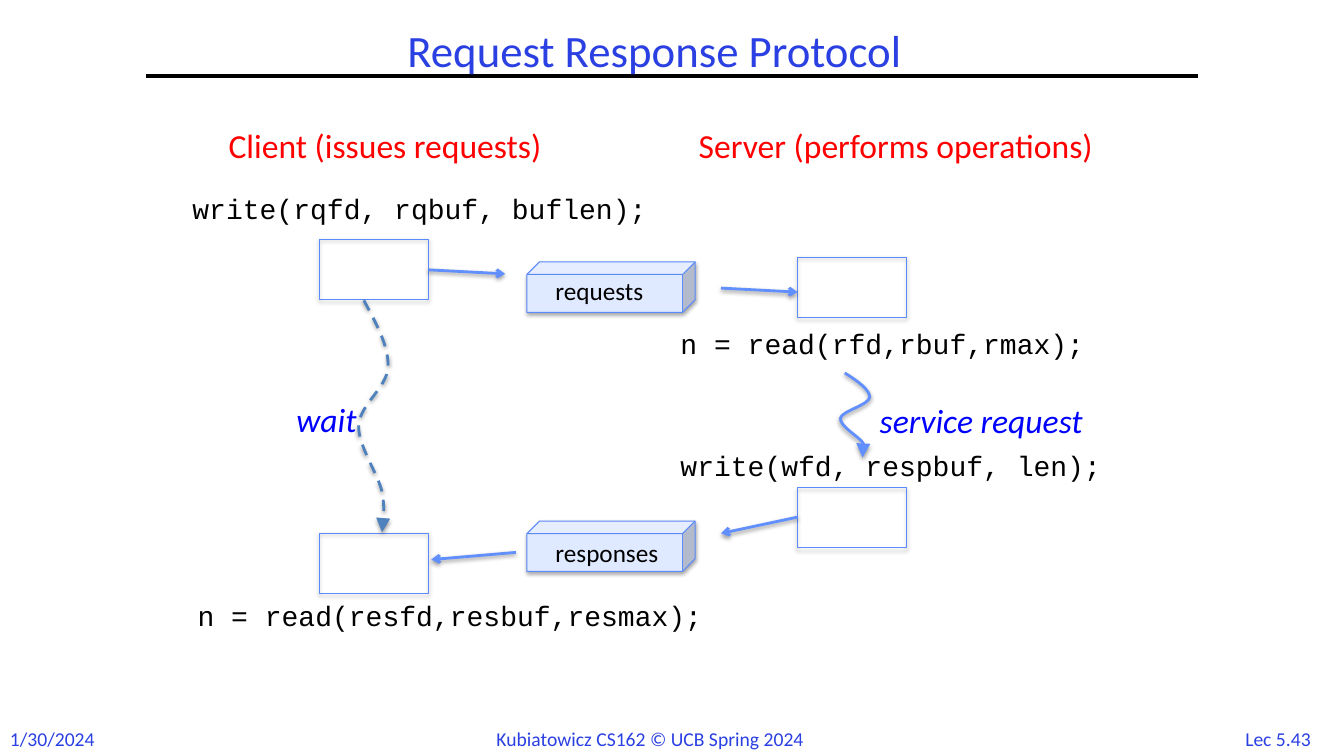
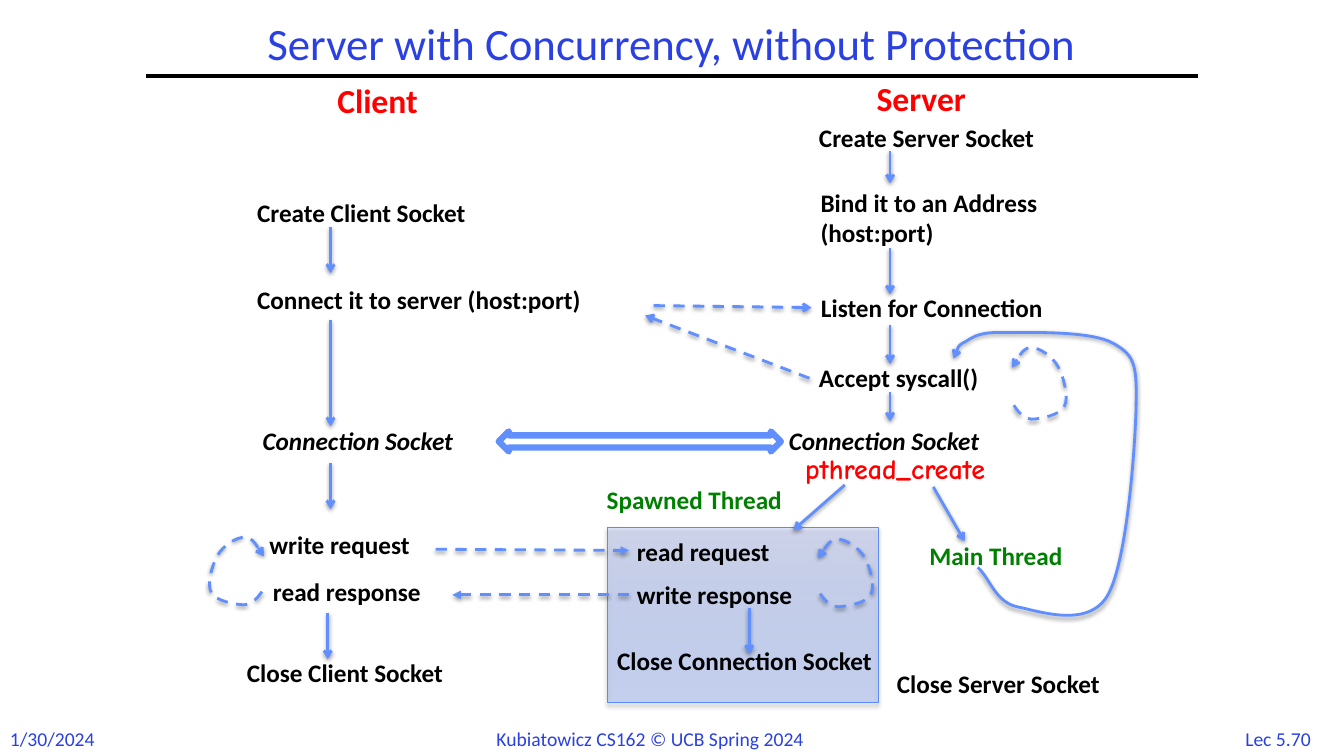
from lxml.etree import SubElement
from pptx import Presentation
from pptx.dml.color import RGBColor
from pptx.enum.dml import MSO_LINE
from pptx.enum.shapes import MSO_CONNECTOR, MSO_SHAPE
from pptx.enum.text import MSO_ANCHOR, PP_ALIGN
from pptx.oxml.ns import qn
from pptx.util import Cm, Pt

COLORS = {
    "title": "2A40E2",
    "black": "000000",
    "white": "FFFFFF",
    "heading": "FF0000",
    "action": "0000FF",
    "thread": "008000",
    "arrow": "618FFD",
    "wait": "4F81BD",
    "border": "5B8AFB",
    "cube": "DFE9FF",
    "panel_bottom": "5F8EFF",
    "panel_top": "C4D0FF",
}
CODE_FONT = "Courier New"
LOOP = [
    (0.05, 1.37),
    (0.15, 1.52), (0.28, 1.68), (0.5, 1.7),
    (0.71, 1.7), (1.22, 1.6), (1.32, 1.4),
    (1.45, 1.19), (1.3, 0.69), (1.17, 0.46),
    (1.02, 0.2), (0.69, 0), (0.5, 0),
    (0.3, 0), (0.15, 0.25), (0, 0.48),
]
SERVICE_CURVE = [
    (21.29, 9.4),
    (21.62, 9.6), (21.92, 9.83), (21.92, 10.01),
    (21.89, 10.21), (21.21, 10.36), (21.18, 10.54),
    (21.16, 10.74), (21.64, 11), (21.74, 11.15),
    (21.84, 11.33), (21.74, 11.53), (21.74, 11.53),
]
WAIT_CURVE = [
    (9.17, 7.57),
    (9.47, 8.13), (9.8, 8.71), (9.78, 9.25),
    (9.75, 9.78), (9.07, 10.19), (9.04, 10.72),
    (9.02, 11.23), (9.53, 11.94), (9.63, 12.4),
    (9.7, 12.85), (9.63, 13.41), (9.63, 13.41),
]
ACCEPT_AGAIN_CURVE = [
    (24.64, 14.3),
    (24.94, 14.55), (25.07, 15.16), (25.63, 15.29),
    (26.16, 15.39), (27.41, 15.85), (27.91, 15.01),
    (28.4, 14.17), (28.6, 11.35), (28.63, 10.31),
    (28.65, 9.25), (28.63, 8.97), (28.07, 8.66),
    (27.53, 8.33), (25.93, 8.38), (25.32, 8.38),
    (24.69, 8.36), (24.54, 8.48), (24.33, 8.61),
    (24.13, 8.71), (24.08, 8.89), (24.03, 9.04),
]


def color(name):
    return RGBColor.from_string(COLORS[name])


def add_text(slide, text, left, top, width, height=1.02, size=18, font="Calibri",
             fill="black", bold=False, italic=False, align=PP_ALIGN.LEFT):
    shape = slide.shapes.add_textbox(Cm(left), Cm(top), Cm(width), Cm(height))
    text_frame = shape.text_frame
    text_frame.word_wrap = True
    text_frame.text = text
    for paragraph in text_frame.paragraphs:
        paragraph.alignment = align
        for run in paragraph.runs:
            run.font.name = font
            run.font.size = Pt(size)
            run.font.bold = bold
            run.font.italic = italic
            run.font.color.rgb = color(fill)
    return shape


def set_shadow(shape, opacity=None, distance=1.8):
    effects = SubElement(shape._element.spPr, qn("a:effectLst"))
    if opacity is None:
        return
    shadow = SubElement(effects, qn("a:outerShdw"), blurRad=str(Pt(3.1)),
                        dist=str(Pt(distance)), dir="5400000", rotWithShape="0")
    black = SubElement(shadow, qn("a:srgbClr"), val=COLORS["black"])
    SubElement(black, qn("a:alpha"), val=str(opacity * 1000))


def style_arrow(shape, head, dashed, line_color, head_size="med"):
    shape.line.color.rgb = color(line_color)
    shape.line.width = Pt(2)
    if dashed:
        shape.line.dash_style = MSO_LINE.DASH
    SubElement(shape._element.spPr.find(qn("a:ln")), qn("a:tailEnd"), type=head,
               w=head_size, len=head_size)
    set_shadow(shape, 38, 1.6)


def add_line(slide, start_x, start_y, end_x, end_y):
    return slide.shapes.add_connector(MSO_CONNECTOR.STRAIGHT, Cm(start_x), Cm(start_y),
                                      Cm(end_x), Cm(end_y))


def add_arrow(slide, start_x, start_y, end_x, end_y, head="arrow", dashed=False):
    connector = add_line(slide, start_x, start_y, end_x, end_y)
    style_arrow(connector, head, dashed, "arrow")


def bend_segments(shape):
    outline = next(shape._element.iter(qn("a:path")))
    segments = outline.findall(qn("a:lnTo"))
    for first in range(0, len(segments), 3):
        bend = SubElement(outline, qn("a:cubicBezTo"))
        for segment in segments[first:first + 3]:
            bend.append(segment[0])
            outline.remove(segment)


def add_curve(slide, points, head="arrow", dashed=False, line_color="arrow", head_size="med"):
    start, *others = [(Cm(x), Cm(y)) for x, y in points]
    builder = slide.shapes.build_freeform(*start)
    builder.add_line_segments(others, close=False)
    shape = builder.convert_to_shape()
    bend_segments(shape)
    shape.fill.background()
    style_arrow(shape, head, dashed, line_color, head_size)


def add_loop(slide, left, top, x_scale=1, y_scale=1):
    points = [(left + x * x_scale, top + y * y_scale) for x, y in LOOP]
    add_curve(slide, points, dashed=True)


def add_box(slide, kind, left, top, width, height, fill=None, line="border",
            line_width=0.75, shadow=35):
    shape = slide.shapes.add_shape(kind, Cm(left), Cm(top), Cm(width), Cm(height))
    if fill:
        shape.fill.solid()
        shape.fill.fore_color.rgb = color(fill)
    else:
        shape.fill.background()
    shape.line.color.rgb = color(line)
    shape.line.width = Pt(line_width)
    set_shadow(shape, shadow)
    return shape


def add_thread_panel(slide, left, top, width, height):
    panel = add_box(slide, MSO_SHAPE.RECTANGLE, left, top, width, height)
    panel.fill.gradient()
    panel.fill.gradient_angle = 90
    stops = (("panel_bottom", 0, 26), ("panel_top", 1, 46))
    for stop, (name, position, _) in zip(panel.fill.gradient_stops, stops):
        stop.position = position
        stop.color.rgb = color(name)
    gradient = panel._element.spPr.find(qn("a:gradFill"))
    for element, (_, _, opacity) in zip(gradient.iter(qn("a:srgbClr")), stops):
        SubElement(element, qn("a:alpha"), val=str(opacity * 1000))


def add_double_arrow(slide, left, top, width, height):
    shape = add_box(slide, MSO_SHAPE.LEFT_RIGHT_ARROW, left, top, width, height,
                    "white", "arrow", 4.5, None)
    shape.adjustments[0] = 0.6


def add_base_slide(presentation, title, title_box, number):
    slide = presentation.slides.add_slide(presentation.slide_layouts[6])
    rule = add_line(slide, 3.67, 1.91, 30.2, 1.91)
    rule.line.color.rgb = color("black")
    rule.line.width = Pt(3)
    set_shadow(rule)
    for text, left, width, align in (
        ("1/30/2024", 0, 2.72, PP_ALIGN.LEFT),
        ("Kubiatowicz CS162 © UCB Spring 2024", 12.26, 9.35, PP_ALIGN.LEFT),
        (f"Lec {number}", 30.98, 2.46, PP_ALIGN.CENTER),
    ):
        add_text(slide, text, left, 18.19, width, 0.85, 14, fill="title", align=align)
    shape = add_text(slide, title, *title_box, size=32, fill="title", align=PP_ALIGN.CENTER)
    shape.text_frame.vertical_anchor = MSO_ANCHOR.MIDDLE
    shape.text_frame.paragraphs[0].line_spacing = 0.9
    return slide


def build_protocol_slide(presentation):
    slide = add_base_slide(presentation, "Request Response Protocol",
                           (5.51, 0.12, 21.97, 2.44), "5.43")
    for text, left, width in (
        ("Client (issues requests)", 5.51, 9.45),
        ("Server (performs operations)", 17.36, 11.46),
    ):
        add_text(slide, text, left, 3.02, width, 1.27, 24, fill="heading")
    for left, top in ((8.05, 6.03), (20.1, 6.48), (8.05, 13.44), (20.1, 12.29)):
        add_box(slide, MSO_SHAPE.RECTANGLE, left, top, 2.75, 1.52)
    for text, cube_top, text_top in (("requests", 6.6, 6.81), ("responses", 13.13, 13.41)):
        add_box(slide, MSO_SHAPE.CUBE, 13.28, cube_top, 4.24, 1.27, "cube")
        add_text(slide, text, 13.75, text_top, 3.48)
    for ends in (
        (10.8, 6.8, 12.73, 6.9),
        (18.17, 7.26, 20.1, 7.36),
        (20.1, 13.03, 18.17, 13.44),
        (13, 13.92, 10.87, 14.1),
    ):
        add_arrow(slide, *ends)
    for text, left, top, width in (
        ("write(rqfd, rqbuf, buflen);", 4.6, 4.7, 12.47),
        ("n = read(rfd,rbuf,rmax);", 16.9, 8.1, 12.34),
        ("write(wfd, respbuf, len);", 16.9, 11.18, 12.47),
        ("n = read(resfd,resbuf,resmax);", 4.73, 14.96, 13.92),
    ):
        add_text(slide, text, left, top, width, 1.12, 20, CODE_FONT)
    add_curve(slide, SERVICE_CURVE, "triangle", head_size="lg")
    add_curve(slide, WAIT_CURVE, "triangle", True, "wait", "lg")
    for text, left, top, width in (
        ("service request", 21.92, 9.96, 6.32),
        ("wait", 7.22, 9.93, 2.3),
    ):
        add_text(slide, text, left, top, width, 1.27, 24, fill="action", italic=True)


def build_concurrency_slide(presentation):
    slide = add_base_slide(presentation, "Server with Concurrency, without Protection",
                           (3.67, 0.43, 26.52, 1.47), "5.70")
    add_thread_panel(slide, 15.3, 13.29, 6.83, 4.42)
    for text, left, top in (("Client", 8.25, 1.88), ("Server", 21.84, 1.83)):
        add_text(slide, text, left, top, 3.3, 1.27, 24, fill="heading", bold=True)
    for text, left, top, width in (
        ("Create Client Socket", 6.23, 4.85, 6.76),
        ("Connect it to server (host:port)", 6.23, 7.04, 9.96),
        ("write request", 6.54, 13.21, 4.5),
        ("read response", 6.63, 14.4, 4.85),
        ("Close Client Socket", 5.97, 16.43, 6.53),
        ("Create Server Socket", 20.39, 2.97, 6.96),
        ("Bind it to an Address\n(host:port)", 20.43, 4.6, 7.11),
        ("Listen for Connection", 20.44, 7.24, 7.11),
        ("Accept syscall()", 20.39, 9.01, 5.41),
        ("read request", 15.8, 13.39, 4.5),
        ("write response", 15.8, 14.48, 5.05),
        ("Close Connection Socket", 15.3, 16.13, 7.47),
        ("Close Server Socket", 22.35, 16.71, 6.86),
    ):
        add_text(slide, text, left, top, width, bold=True)
    for left in (6.37, 19.63):
        add_text(slide, "Connection Socket", left, 10.59, 6.32, bold=True, italic=True)
    for text, left, top in (("Spawned Thread", 15.04, 12.09), ("Main Thread", 23.17, 13.49)):
        add_text(slide, text, left, top, 5.64, fill="thread", bold=True)
    add_text(slide, "pthread_create", 20.04, 11.25, 6.12, 1.12, 20, "Comic Neue",
             "heading", bold=True)
    for x, spans in (
        (8.33, ((5.72, 6.88), (8.06, 10.74), (11.66, 12.83))),
        (8.26, ((15.44, 16.61),)),
        (18.88, ((15.32, 16.48),)),
        (22.43, ((3.81, 4.62), (6.25, 7.42), (8.18, 9.17), (9.88, 10.62))),
    ):
        for top, bottom in spans:
            add_arrow(slide, x, top, x, bottom)
    add_arrow(slide, 21.29, 12.22, 19.99, 13.36)
    add_arrow(slide, 23.52, 12.27, 24.31, 13.64)
    for *ends, head in (
        (16.47, 7.7, 20.45, 7.75, "arrow"),
        (20.4, 9.53, 16.26, 7.95, "arrow"),
        (10.98, 13.84, 15.85, 13.87, "triangle"),
        (15.85, 14.99, 11.4, 14.99, "triangle"),
    ):
        add_arrow(slide, *ends, head=head, dashed=True)
    add_double_arrow(slide, 12.57, 10.87, 7.11, 0.51)
    add_curve(slide, ACCEPT_AGAIN_CURVE)
    add_loop(slide, 25.5, 8.76, y_scale=1.06)
    add_loop(slide, 20.62, 13.59)
    add_loop(slide, 6.65, 13.54, x_scale=-1)


def main():
    presentation = Presentation()
    presentation.slide_width = Cm(33.87)
    presentation.slide_height = Cm(19.05)
    build_protocol_slide(presentation)
    build_concurrency_slide(presentation)
    presentation.save("out.pptx")


if __name__ == "__main__":
    main()
